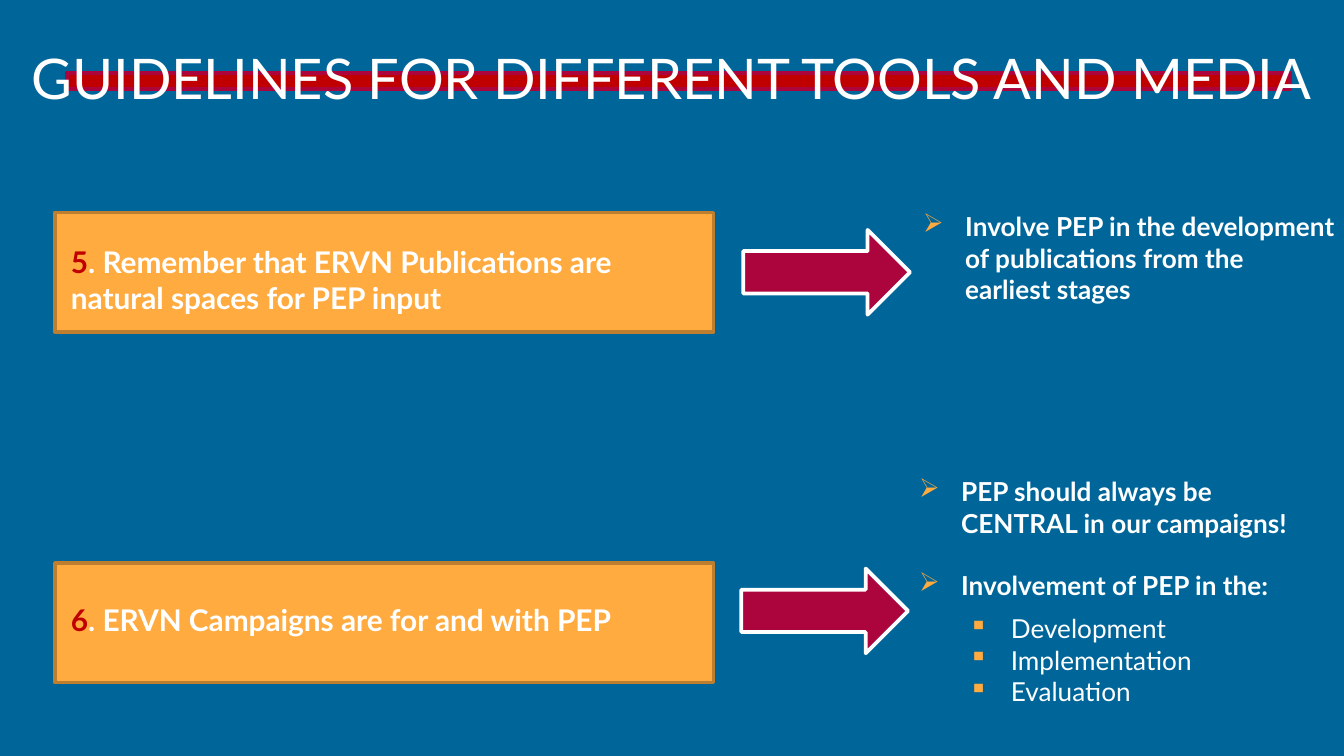
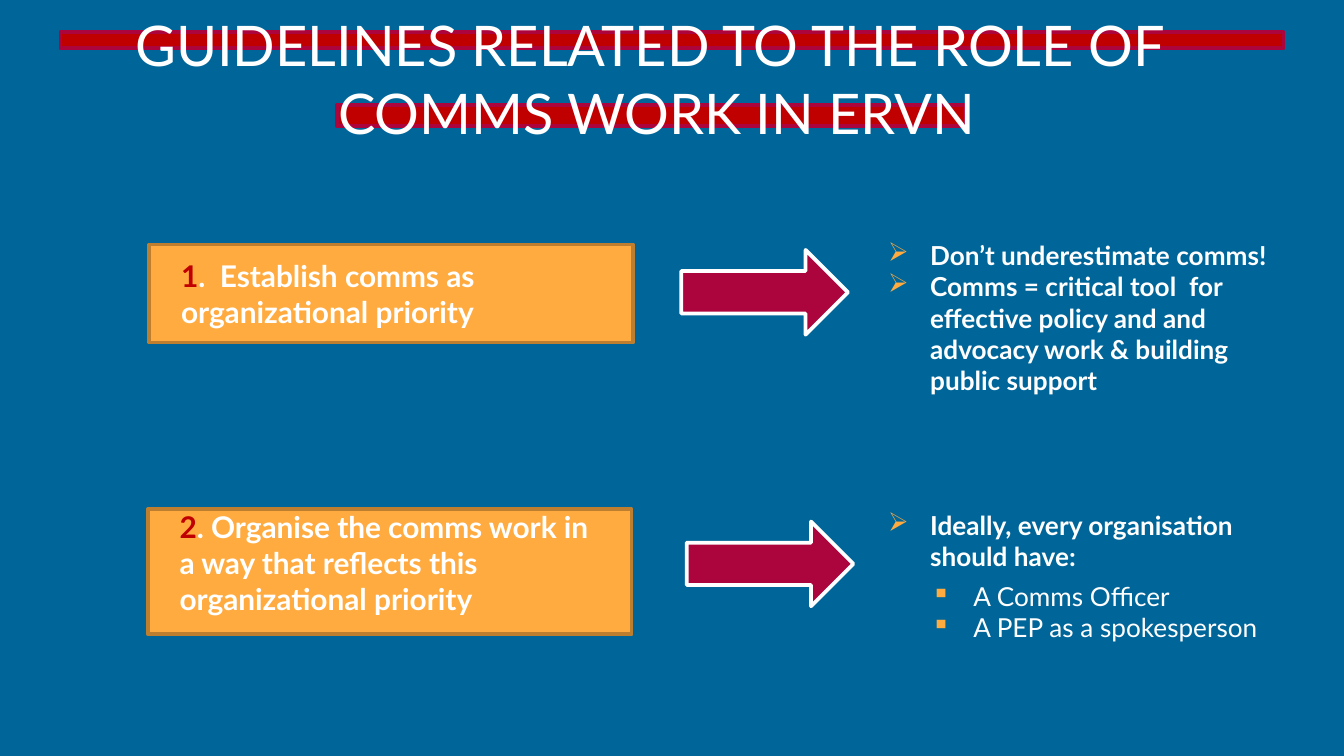
from lxml.etree import SubElement
from pptx import Presentation
from pptx.dml.color import RGBColor
from pptx.enum.shapes import MSO_SHAPE as SHAPE
from pptx.enum.text import MSO_ANCHOR as ANCHOR, PP_ALIGN as ALIGN
from pptx.oxml.ns import qn
from pptx.util import Pt

BLUE, ORANGE, BROWN = "006699", "FFAB40", "BD7F2F"
RED, CRIMSON, WHITE = "C00000", "AC043C", "FFFFFF"
TITLE = {"name": "Lato", "size": Pt(30)}
CARD = {"name": "Lato", "size": Pt(16), "bold": True}
POINT = {"name": "Lato", "size": Pt(14), "bold": True}
SUBPOINT = {"name": "Lato", "size": Pt(14), "bold": False}
INDENT = 22.5
LIST_WIDTH = 234.8
ARROW_SIZE = (89.3, 45.4)

SLIDES = [
    {
        "title": ("GUIDELINES FOR DIFFERENT TOOLS AND MEDIA", (0, 16, 720, 44.6)),
        "bands": [(36, 39, 655.2, 8.6)],
        "margins": (8.5, 6),
        "rows": [
            {
                "card": ("5", ". Remember that ERVN Publications are natural spaces for PEP input",
                         (29.5, 113.8, 352.8, 64), 4),
                "arrow": (398.2, 123.2),
                "points": (["Involve PEP in the development of publications from the earliest stages"],
                           (487.5, 109.4, 75), 0),
            },
            {
                "card": ("6", ". ERVN Campaigns are for and with PEP",
                         (29.5, 301.7, 352.8, 64), -2),
                "arrow": (397.2, 304.6),
                "points": (["PEP should always be CENTRAL in our campaigns!",
                            "Involvement of PEP in the:"],
                           (485.3, 251.3, 75), 16.8),
                "subpoints": (["Development", "Implementation", "Evaluation"],
                              (511.9, 324.7, 58.3)),
            },
        ],
    },
    {
        "title": ("GUIDELINES RELATED TO THE ROLE OF \vCOMMS WORK IN ERVN", (-8, -1.4, 720, 44.6)),
        "bands": [(180.7, 56.2, 336.2, 11.5), (32.4, 17.3, 655.2, 8.6)],
        "margins": (17, 17),
        "rows": [
            {
                "card": ("1", ".  Establish comms as organizational priority",
                         (80, 131, 259.2, 52.6), 0),
                "arrow": (365, 133.9),
                "points": (["Don’t underestimate comms!",
                            "Comms = critical tool  for effective policy and and advocacy work "
                            "& building public support"],
                           (468.7, 124.6, 108.7), 0),
            },
            {
                "card": ("2", ". Organise the comms work in a way that reflects this "
                         "organizational priority", (79.2, 272.9, 259.2, 67), -5),
                "arrow": (367.9, 279.4),
                "points": (["Ideally, every organisation should have:"],
                           (468.7, 269.3, 41), 0),
                "subpoints": (["A Comms Officer", "A PEP as a spokesperson"],
                              (491.8, 307.4, 41)),
            },
        ],
    },
]


def color(value):
    return RGBColor.from_string(value)


def set_attrs(target, values):
    for name, value in values.items():
        setattr(target, name, value)


def add_run(p, text, font, hue=WHITE):
    r = p.add_run()
    r.text = text
    set_attrs(r.font, font)
    r.font.color.rgb = color(hue)


def add_shape(s, kind, box, fill, line):
    sp = s.shapes.add_shape(kind, *map(Pt, box))
    sp.shadow.inherit = False
    sp.fill.solid()
    sp.fill.fore_color.rgb = color(fill)
    sp.line.color.rgb = color(line)
    sp.line.width = Pt(2)
    return sp


def add_frame(s, box, margins):
    tf = s.shapes.add_textbox(*map(Pt, box)).text_frame
    side, edge = margins
    set_attrs(tf, {
        "word_wrap": True, "vertical_anchor": ANCHOR.TOP,
        "margin_left": Pt(side), "margin_right": Pt(side),
        "margin_top": Pt(edge), "margin_bottom": Pt(edge),
    })
    return tf


def add_header(s, title, bands):
    for band in bands:
        add_shape(s, SHAPE.RECTANGLE, band, RED, CRIMSON)
    text, box = title
    p = add_frame(s, box, (7.2, 7.2)).paragraphs[0]
    p.alignment = ALIGN.CENTER
    lines = text.split("\v")
    for i, line in enumerate(lines):
        if i:
            p.add_line_break()
        add_run(p, line, TITLE)


def add_card(s, number, text, box, shift, margins):
    sp = add_shape(s, SHAPE.RECTANGLE, box, ORANGE, BROWN)
    left, right = margins
    tf = sp.text_frame
    set_attrs(tf, {
        "word_wrap": True, "vertical_anchor": ANCHOR.MIDDLE,
        "margin_left": Pt(left), "margin_right": Pt(right),
        "margin_top": Pt(max(0, 2 * shift)), "margin_bottom": Pt(max(0, -2 * shift)),
    })
    p = tf.paragraphs[0]
    p.alignment = ALIGN.LEFT
    add_run(p, number, CARD, RED)
    add_run(p, text, CARD)


def add_bullet(p, mark):
    pr = p._p.get_or_add_pPr()
    pr.set("marL", str(Pt(INDENT)))
    pr.set("indent", str(-Pt(INDENT)))
    SubElement(SubElement(pr, qn("a:buClr")), qn("a:srgbClr")).set("val", ORANGE)
    SubElement(pr, qn("a:buChar")).set("char", mark)


def add_list(s, items, box, mark, font, gap=0):
    left, top, height = box
    tf = add_frame(s, (left, top, LIST_WIDTH, height), (7.2, 3.6))
    for i, item in enumerate(items):
        p = tf.add_paragraph() if i else tf.paragraphs[0]
        p.space_before = Pt(gap if i else 0)
        add_bullet(p, mark)
        add_run(p, item, font)


def add_row(s, row, margins):
    add_card(s, *row["card"], margins)
    add_shape(s, SHAPE.RIGHT_ARROW, row["arrow"] + ARROW_SIZE, CRIMSON, WHITE)
    items, box, gap = row["points"]
    add_list(s, items, box, "➢", POINT, gap)
    if "subpoints" in row:
        add_list(s, *row["subpoints"], "▪", SUBPOINT)


def add_guideline_slide(prs, content):
    s = prs.slides.add_slide(prs.slide_layouts[6])
    s.background.fill.solid()
    s.background.fill.fore_color.rgb = color(BLUE)
    add_header(s, content["title"], content["bands"])
    for row in content["rows"]:
        add_row(s, row, content["margins"])


def main():
    prs = Presentation()
    prs.slide_width, prs.slide_height = Pt(720), Pt(405)
    for content in SLIDES:
        add_guideline_slide(prs, content)
    prs.save("out.pptx")


if __name__ == "__main__":
    main()
